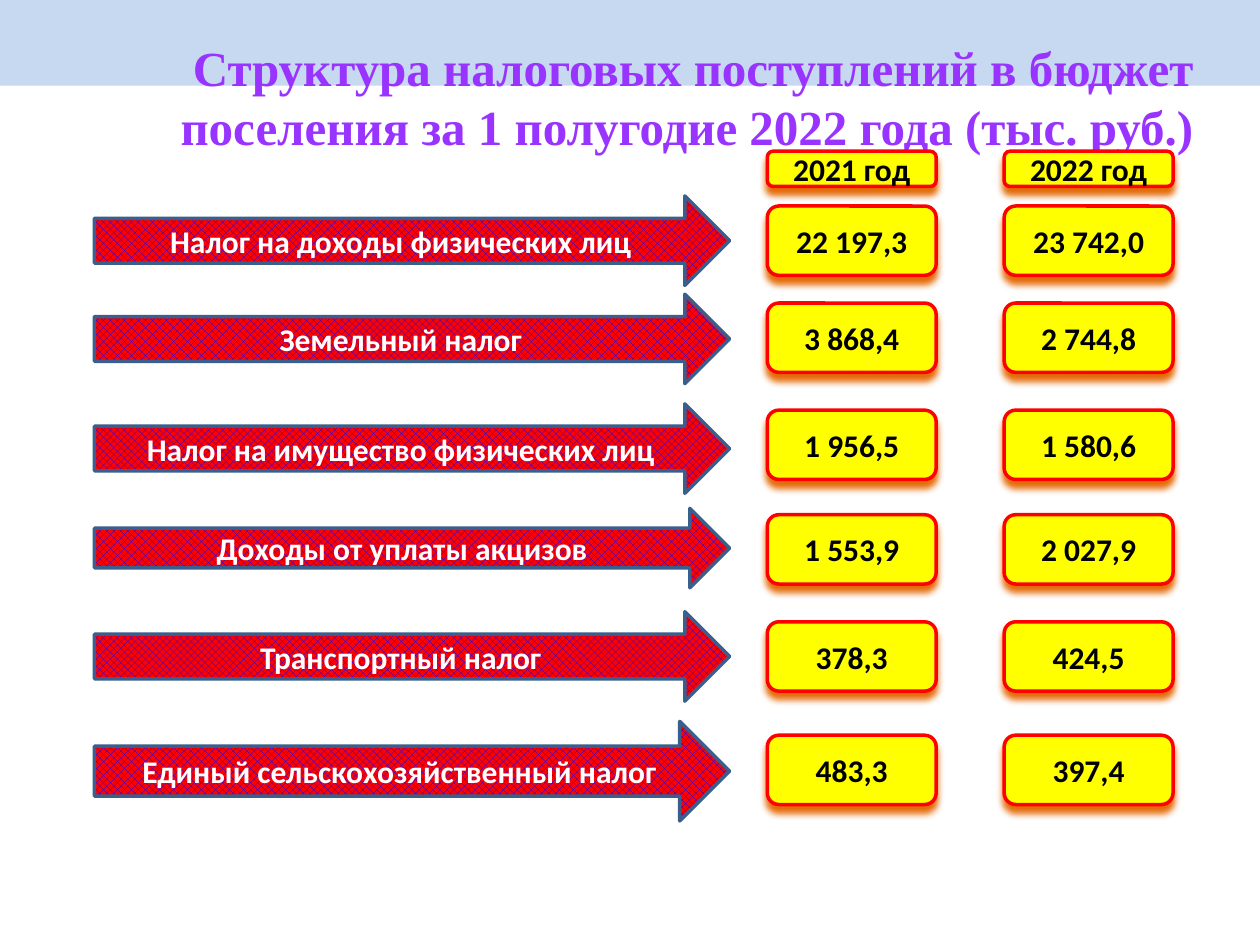
import pptx
import pptx.util
import pptx.dml.color
import pptx.enum.dml
import pptx.enum.shapes
import pptx.enum.text
import pptx.oxml
import pptx.oxml.ns
from pptx.util import Inches, Pt

RGBColor = pptx.dml.color.RGBColor
SHAPE = pptx.enum.shapes.MSO_SHAPE
ANCHOR = pptx.enum.text.MSO_ANCHOR

BAND = RGBColor(0xC6, 0xD9, 0xF1)
PURPLE = RGBColor(0x99, 0x33, 0xFF)
RED = RGBColor(0xFF, 0x00, 0x00)
BLUE = RGBColor(0x00, 0x00, 0xFF)
NAVY = RGBColor(0x3A, 0x5F, 0x8C)
YELLOW = RGBColor(0xFF, 0xFF, 0x00)
BLACK = RGBColor(0x00, 0x00, 0x00)
WHITE = RGBColor(0xFF, 0xFF, 0xFF)

SHADOW = (
    '<a:effectLst %s><a:outerShdw blurRad="50800" dist="50800" dir="5400000" rotWithShape="0">'
    '<a:srgbClr val="E46C0A"/></a:outerShdw></a:effectLst>' % pptx.oxml.ns.nsdecls("a")
)

ARROW_LEFT, ARROW_WIDTH = 0.75, 5.04
YEAR_LEFTS = (6.09, 7.97)
VALUE_WIDTH, VALUE_HEIGHT = 1.34, 0.55
YEAR_MIDDLE, YEAR_HEIGHT = 1.34, 0.28

years = ("2021 год", "2022 год")
taxes = [
    ("Налог на доходы физических лиц", 1.91, 0.71, 1.91, ("22 197,3", "23 742,0")),
    ("Земельный налог", 2.69, 0.71, 2.68, ("3 868,4", "2 744,8")),
    ("Налог на имущество физических лиц", 3.56, 0.71, 3.53, ("1 956,5", "1 580,6")),
    ("Доходы от уплаты акцизов", 4.35, 0.63, 4.36, ("1 553,9", "2 027,9")),
    ("Транспортный налог", 5.21, 0.71, 5.21, ("378,3", "424,5")),
    ("Единый сельскохозяйственный налог", 6.12, 0.79, 6.11, ("483,3", "397,4")),
]

prs = pptx.Presentation()
prs.slide_width, prs.slide_height = Inches(10), Inches(7.5)
slide = prs.slides.add_slide(prs.slide_layouts[6])


def write(frame, wording, font_name, size, color):
    frame.word_wrap = True
    paragraph = frame.paragraphs[0]
    paragraph.alignment = pptx.enum.text.PP_ALIGN.CENTER
    run = paragraph.add_run()
    run.text = wording
    run.font.name = font_name
    run.font.size = Pt(size)
    run.font.bold = True
    run.font.color.rgb = color
    return paragraph


def add_label(kind, left, middle, width, height, wording, line_color, text_color):
    label = slide.shapes.add_shape(
        kind, Inches(left), Inches(middle - height / 2), Inches(width), Inches(height))
    label.shadow.inherit = False
    label.line.color.rgb = line_color
    label.line.width = Pt(2)
    label.text_frame.vertical_anchor = ANCHOR.MIDDLE
    write(label.text_frame, wording, "Calibri", 18, text_color)
    return label


band = slide.shapes.add_shape(SHAPE.RECTANGLE, 0, 0, prs.slide_width, Inches(0.68))
band.shadow.inherit = False
band.fill.solid()
band.fill.fore_color.rgb = BAND
band.line.fill.background()

title = slide.shapes.add_textbox(Inches(1), Inches(0.21), Inches(9), Inches(1.25))
title.text_frame.vertical_anchor = ANCHOR.TOP
title.text_frame.margin_top = Inches(0.09)
heading = write(
    title.text_frame,
    "Структура налоговых поступлений в бюджет поселения за 1 полугодие 2022 года (тыс. руб.) ",
    "Times New Roman", 28, PURPLE)

values = [(YEAR_MIDDLE, YEAR_HEIGHT, years)]
for tax, arrow_middle, arrow_height, value_middle, amounts in taxes:
    arrow = add_label(SHAPE.RIGHT_ARROW, ARROW_LEFT, arrow_middle, ARROW_WIDTH,
                      arrow_height, tax, NAVY, WHITE)
    arrow.fill.patterned()
    arrow.fill.pattern = pptx.enum.dml.MSO_PATTERN.OUTLINED_DIAMOND
    arrow.fill.fore_color.rgb = BLUE
    arrow.fill.back_color.rgb = RED
    values.append((value_middle, VALUE_HEIGHT, amounts))

for middle, height, wordings in values:
    for left, wording in zip(YEAR_LEFTS, wordings):
        value = add_label(SHAPE.ROUNDED_RECTANGLE, left, middle, VALUE_WIDTH,
                          height, wording, RED, BLACK)
        value.fill.solid()
        value.fill.fore_color.rgb = YELLOW
        properties = value._element.spPr
        properties.replace(properties.find(pptx.oxml.ns.qn("a:effectLst")),
                           pptx.oxml.parse_xml(SHADOW))

prs.save("out.pptx")
